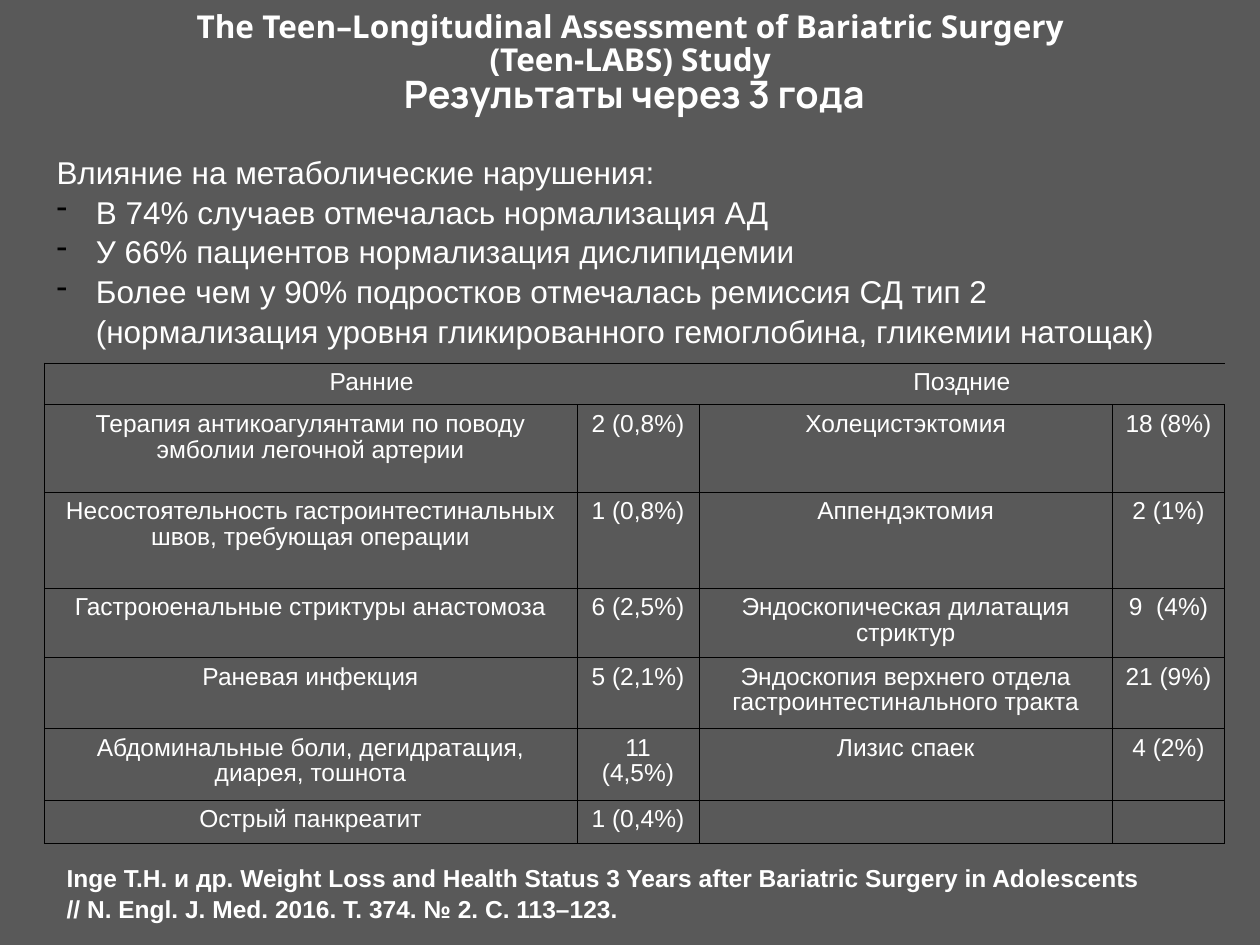
import pptx
import pptx.util
import pptx.dml.color
import pptx.enum.text
import pptx.oxml
import pptx.oxml.ns
import lxml.etree as etree
from dataclasses import dataclass

Pt = pptx.util.Pt
RGB = pptx.dml.color.RGBColor
ALIGN = pptx.enum.text.PP_ALIGN
qn = pptx.oxml.ns.qn


@dataclass
class Theme:
    back: str = "595959"
    ink: str = "FFFFFF"
    line: str = "000000"
    font: str = "Arial"
    head: str = "Noto Sans"
    sub: str = "Manrope"
    big: float = 21.6
    body: float = 18
    small: float = 14
    rule: float = 0.34
    plain: str = "{2D5ABB26-0587-4C30-8999-92F81FD0307C}"


T = Theme()

ROWS = [
    ["Ранние", "", "Поздние", ""],
    ["Терапия антикоагулянтами по поводу эмболии легочной артерии", "2 (0,8%)",
     "Холецистэктомия", "18 (8%)"],
    ["Несостоятельность гастроинтестинальных швов, требующая операции", "1 (0,8%)",
     "Аппендэктомия", "2 (1%)"],
    ["Гастроюенальные стриктуры анастомоза", "6 (2,5%)",
     "Эндоскопическая дилатация стриктур", "9  (4%)"],
    ["Раневая инфекция", "5 (2,1%)",
     "Эндоскопия верхнего отдела гастроинтестинального тракта", "21 (9%)"],
    ["Абдоминальные боли, дегидратация, диарея, тошнота", "11 (4,5%)",
     "Лизис спаек", "4 (2%)"],
    ["Острый панкреатит", "1 (0,4%)", "", ""],
]
WIDTHS = [304.5, 69.8, 236.2, 64.1]
HEIGHTS = [23.8, 49.9, 54.9, 39.5, 40.8, 40.8, 24.1]


def put(obj, fmt):
    for key, val in fmt.items():
        setattr(obj, key, val)


def write(para, text, size, font=T.font, bold=False):
    run = para.add_run()
    run.text = text
    put(run.font, {"size": Pt(size), "name": font, "bold": bold})
    run.font.color.rgb = RGB.from_string(T.ink)


def add_box(slide, box, pad):
    frame = slide.shapes.add_textbox(*map(Pt, box)).text_frame
    put(frame, {"word_wrap": True, "margin_top": Pt(pad), "margin_bottom": Pt(pad)})
    return frame


# Title: two study lines and a larger subtitle
def add_title(slide, box):
    para = add_box(slide, box, 7.2).paragraphs[0]
    put(para, {"alignment": ALIGN.CENTER, "line_spacing": 0.86})
    for text in ("The Teen–Longitudinal Assessment of Bariatric Surgery ",
                 "(Teen-LABS) Study "):
        write(para, text, T.body, T.head, True)
        para.add_line_break()
    write(para, "Результаты через 3 года", T.big, T.sub, True)


# Lead line followed by dashed findings
def add_list(slide, box, lead, items):
    frame = add_box(slide, box, 3.6)
    for i, text in enumerate([lead] + items):
        para = frame.paragraphs[0] if i == 0 else frame.add_paragraph()
        para.line_spacing = 1.05
        props = para._p.get_or_add_pPr()
        put_in = {"marL": Pt(22.5), "indent": -Pt(22.5)}
        for key, val in put_in.items():
            props.set(key, str(val))
        if i:
            tint = etree.SubElement(props, qn("a:buClr"))
            etree.SubElement(tint, qn("a:srgbClr")).set("val", T.line)
            etree.SubElement(props, qn("a:buChar")).set("char", "-")
        write(para, text, T.body)


def add_edges(cell, sides):
    props = cell._tc.get_or_add_tcPr()
    for side in "LRTB":
        edge = etree.SubElement(props, qn("a:ln" + side))
        if side in sides:
            edge.set("w", str(Pt(T.rule)))
            fill = etree.SubElement(edge, qn("a:solidFill"))
            etree.SubElement(fill, qn("a:srgbClr")).set("val", T.line)
        else:
            edge.set("w", "0")
            etree.SubElement(edge, qn("a:noFill"))


# Table of early and late complications
def add_grid(slide, box):
    table = slide.shapes.add_table(len(ROWS), len(WIDTHS), *map(Pt, box)).table
    put(table, {"first_row": False, "horz_banding": False})
    table._tbl.tblPr.find(qn("a:tableStyleId")).text = T.plain
    for col, width in zip(table.columns, WIDTHS):
        col.width = Pt(width)
    for row, height in zip(table.rows, HEIGHTS):
        row.height = Pt(height)
    for left in (0, 2):
        table.cell(0, left).merge(table.cell(0, left + 1))
    for r, texts in enumerate(ROWS):
        for c, text in enumerate(texts):
            cell = table.cell(r, c)
            put(cell, {"margin_left": Pt(7.2), "margin_right": Pt(7.2),
                       "margin_top": Pt(4.3), "margin_bottom": Pt(3.6)})
            add_edges(cell, "LRTB" if r else "LTB" if c == 0 else "TB")
            cell.fill.background()
            para = cell.text_frame.paragraphs[0]
            put(para, {"alignment": ALIGN.CENTER, "line_spacing": 0.93})
            if text:
                write(para, text, T.small)
            else:
                end = etree.SubElement(para._p, qn("a:endParaRPr"))
                end.set("sz", str(T.small * 100))


# Citation under the table
def add_cite(slide, box, text):
    para = add_box(slide, box, 7.2).paragraphs[0]
    para.line_spacing = 1.05
    write(para, text, T.small, bold=True)


def main():
    deck = pptx.Presentation()
    put(deck, {"slide_width": Pt(720), "slide_height": Pt(540)})
    slide = deck.slides.add_slide(deck.slide_layouts[6])
    fill = slide.background.fill
    fill.solid()
    fill.fore_color.rgb = RGB.from_string(T.back)

    add_title(slide, (25.2, 0, 674.6, 54.7))
    add_list(slide, (25.2, 82.8, 668.9, 115.2),
             "Влияние на метаболические нарушения:",
             ["В 74% случаев отмечалась нормализация АД",
              "У 66% пациентов нормализация дислипидемии",
              "Более чем у 90% подростков отмечалась ремиссия СД тип 2 "
              "(нормализация уровня гликированного гемоглобина, гликемии натощак)"])
    add_grid(slide, (25.2, 207.4, sum(WIDTHS), sum(HEIGHTS)))
    add_cite(slide, (31, 485.3, 629.3, 35.3),
             "Inge T.H. и др. Weight Loss and Health Status 3 Years after Bariatric "
             "Surgery in Adolescents // N. Engl. J. Med. 2016. Т. 374. № 2. С. 113–123.")
    deck.save("out.pptx")


if __name__ == "__main__":
    main()
